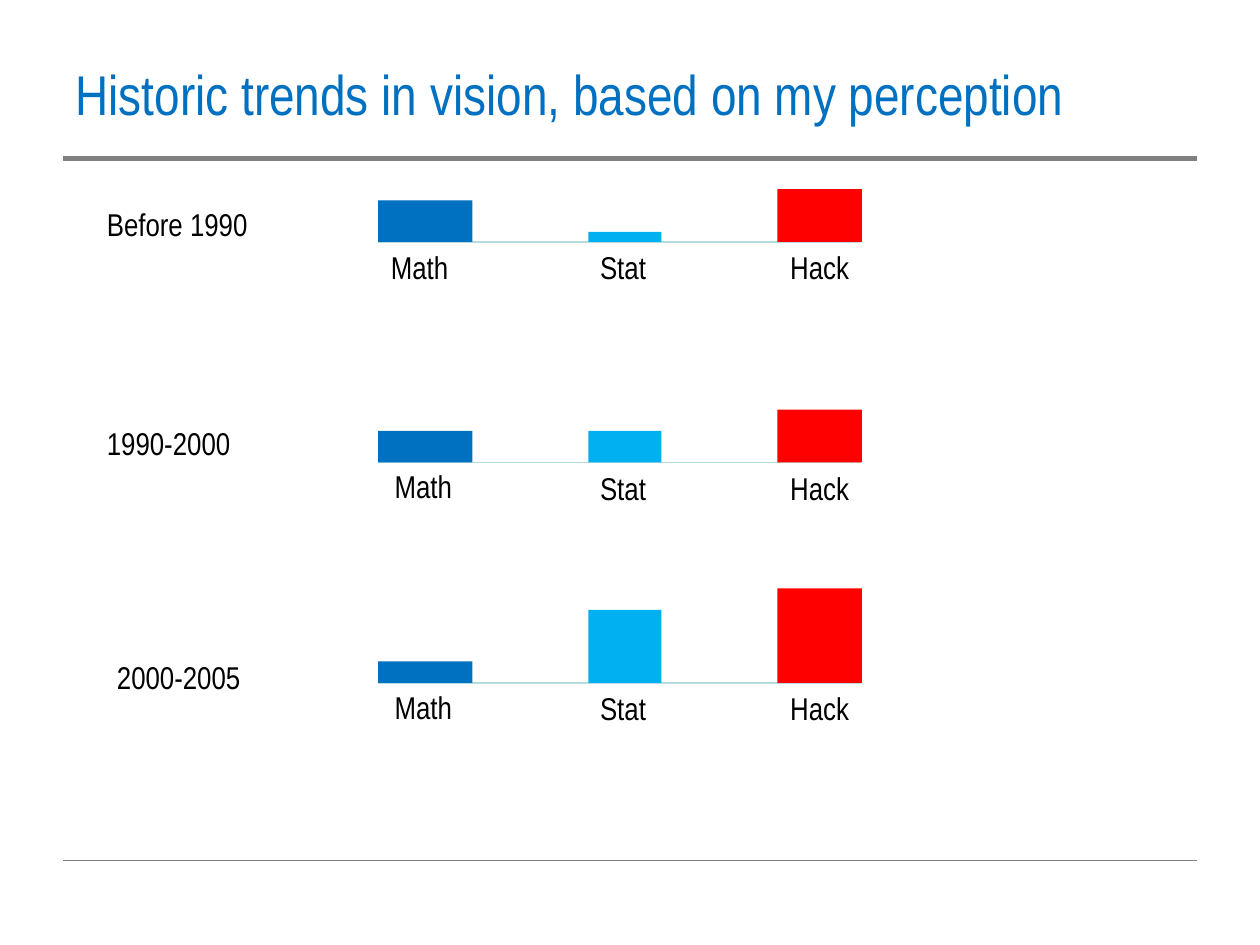
from lxml import etree
from pptx import Presentation
from pptx.dml.color import RGBColor
from pptx.enum.shapes import MSO_CONNECTOR, MSO_SHAPE
from pptx.enum.text import MSO_ANCHOR, MSO_AUTO_SIZE, PP_ALIGN
from pptx.oxml.ns import qn
from pptx.util import Inches, Pt

LEFT, CENTER = PP_ALIGN.LEFT, PP_ALIGN.CENTER
TOP = MSO_ANCHOR.TOP
NO_FIT = MSO_AUTO_SIZE.NONE
STRAIGHT = MSO_CONNECTOR.STRAIGHT
RECTANGLE = MSO_SHAPE.RECTANGLE

THEME = {
    "font": "Arial Narrow",
    "title_size": 32,
    "label_size": 18,
    "title": "0070C0",
    "text": "000000",
    "rule": "808080",
    "baseline": "B6DCDF",
}

TITLE = "Historic trends in vision, based on my perception"
RULES = [(1.26, 3), (6.83, 0.75)]

# name, bar left, bar width, label left, label width, colour
SKILLS = [
    ("Hack", 6.17, 0.67, 6.17, 0.67, "FF0000"),
    ("Stat", 4.67, 0.58, 4.66, 0.57, "00B0F0"),
    ("Math", 3, 0.75, 3.03, 0.66, "0070C0"),
]
PERIODS = [
    {"name": "Before 1990", "at": (0.75, 1.58, 1.33),
     "heights": (0.42, 0.08, 0.33), "shifts": {"Math": (-0.03, 0)}},
    {"name": "1990-2000", "at": (0.75, 3.32, 1.2),
     "heights": (0.42, 0.25, 0.25), "shifts": {"Math": (0, -0.01)}},
    {"name": "2000-2005", "at": (0.83, 5.17, 1.2),
     "heights": (0.75, 0.58, 0.17), "shifts": {"Math": (0, -0.01)}},
]
FIRST_BASELINE, PERIOD_STEP = 1.92, 1.75
AXIS_LEFT, AXIS_RIGHT = 3, 6.83
LABEL_HEIGHT = 0.4


def color(name):
    return RGBColor.from_string(THEME.get(name, name))


def write(frame, text, size, ink, align=LEFT):
    frame.text = text
    frame.word_wrap = False
    frame.auto_size = NO_FIT
    frame.vertical_anchor = TOP
    para = frame.paragraphs[0]
    para.alignment = align
    font = para.runs[0].font
    font.name = THEME["font"]
    font.size = Pt(THEME[size])
    font.color.rgb = color(ink)


def add_line(page, left, right, y, ink, width):
    line = page.shapes.add_connector(
        STRAIGHT, Inches(left), Inches(y), Inches(right), Inches(y))
    line.line.color.rgb = color(ink)
    line.line.width = Pt(width)
    etree.SubElement(line._element.spPr, qn("a:effectLst"))


def add_label(page, text, left, top, width, align=LEFT):
    box = page.shapes.add_textbox(
        Inches(left), Inches(top), Inches(width), Inches(LABEL_HEIGHT))
    write(box.text_frame, text, "label_size", "text", align)


def add_bar(page, left, baseline, width, height, ink):
    bar = page.shapes.add_shape(
        RECTANGLE, Inches(left), Inches(baseline - height),
        Inches(width), Inches(height))
    bar.shadow.inherit = False
    bar.fill.solid()
    bar.fill.fore_color.rgb = color(ink)
    bar.line.fill.background()


def add_period(page, period, baseline):
    add_line(page, AXIS_LEFT, AXIS_RIGHT, baseline, "baseline", 0.75)
    for skill, height in zip(SKILLS, period["heights"]):
        name, left, width, label_left, label_width, ink = skill
        add_bar(page, left, baseline, width, height, ink)
        shift_x, shift_y = period["shifts"].get(name, (0, 0))
        add_label(page, name, label_left + shift_x, baseline + shift_y,
                  label_width, CENTER)
    add_label(page, period["name"], *period["at"])


def main():
    deck = Presentation()
    deck.slide_width, deck.slide_height = Inches(10), Inches(7.5)
    page = deck.slides.add_slide(deck.slide_layouts[5])

    for y, width in RULES:
        add_line(page, 0.5, 9.5, y, "rule", width)

    title = page.shapes.title
    title.left, title.top = Inches(0.5), Inches(0.42)
    title.width, title.height = Inches(8.13), Inches(0.64)
    write(title.text_frame, TITLE, "title_size", "title")

    for index, period in enumerate(PERIODS):
        add_period(page, period, FIRST_BASELINE + index * PERIOD_STEP)

    deck.save("out.pptx")


if __name__ == "__main__":
    main()
